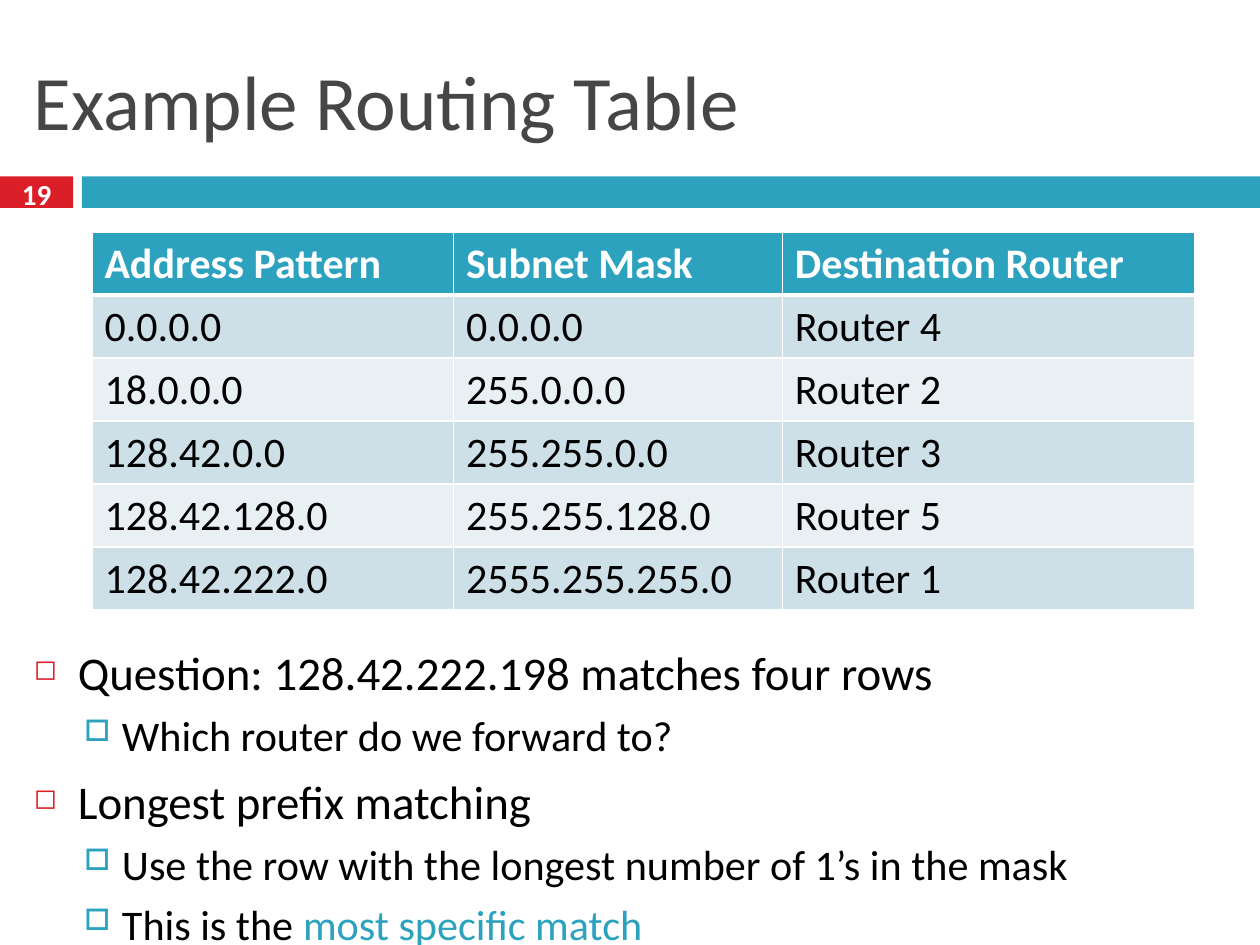
from pptx import Presentation
from pptx.dml.color import RGBColor
from pptx.enum.shapes import MSO_SHAPE as Shape
from pptx.enum.text import MSO_ANCHOR as Anchor, PP_ALIGN as Align
from pptx.oxml.ns import qn
from pptx.util import Inches, Pt
from lxml.etree import SubElement

THEME = {
    "font": "Calibri", "teal": "2DA2BF", "red": "DA1F28", "white": "FFFFFF",
    "black": "000000", "title": "464646", "bands": ("CDE0E8", "E8F0F4"),
    "title_size": 44, "number_size": 16.6, "table_size": 24,
}
LEVELS = (
    {"size": 26.8, "before": 7, "margin": 0.35, "indent": -0.35,
     "bullet": "◻", "bullet_color": THEME["red"], "bullet_pct": 60},
    {"size": 24.1, "before": 5.5, "margin": 0.7, "indent": -0.3,
     "bullet": "□", "bullet_color": THEME["teal"], "bullet_pct": 70},
)
TITLE = "Example Routing Table"
PAGE_NUMBER = "19"
ROUTES = (
    ("Address Pattern", "Subnet Mask", "Destination Router"),
    ("0.0.0.0", "0.0.0.0", "Router 4"),
    ("18.0.0.0", "255.0.0.0", "Router 2"),
    ("128.42.0.0", "255.255.0.0", "Router 3"),
    ("128.42.128.0", "255.255.128.0", "Router 5"),
    ("128.42.222.0", "2555.255.255.0", "Router 1"),
)
COLUMN_WIDTHS = (2.87, 2.61, 3.27)
ROW_HEIGHT = 0.5
POINTS = (
    (0, "Question: 128.42.222.198 matches four rows", ""),
    (1, "Which router do we forward to?", ""),
    (0, "Longest prefix matching", ""),
    (1, "Use the row with the longest number of 1’s in the mask", ""),
    (1, "This is the ", "most specific match"),
)


def rgb(color):
    return RGBColor.from_string(color)


def style(paragraph, size, color, bold=False):
    font = paragraph.font
    font.name, font.size, font.bold = THEME["font"], Pt(size), bold
    font.color.rgb = rgb(color)


def add_bar(slide, left, width, color):
    bar = slide.shapes.add_shape(
        Shape.RECTANGLE, Inches(left), Inches(1.4), Inches(width), Inches(0.25))
    bar.shadow.inherit = False
    bar.fill.solid()
    bar.fill.fore_color.rgb = rgb(color)
    bar.line.fill.background()


def add_text(slide, box, anchor):
    frame = slide.shapes.add_textbox(*map(Inches, box)).text_frame
    frame.word_wrap = True
    frame.vertical_anchor = anchor
    return frame


def set_borders(cell, bottom):
    properties = cell._tc.get_or_add_tcPr()
    sides = (("a:lnL", 1), ("a:lnR", 1), ("a:lnT", 1), ("a:lnB", bottom))
    for position, (side, width) in enumerate(sides):
        line = SubElement(properties, qn(side), w=str(Pt(width)))
        fill = SubElement(line, qn("a:solidFill"))
        SubElement(fill, qn("a:srgbClr"), val=THEME["white"])
        properties.insert(position, line)


def add_routes(slide):
    table = slide.shapes.add_table(
        len(ROUTES), len(COLUMN_WIDTHS), Inches(0.73), Inches(1.84),
        Inches(sum(COLUMN_WIDTHS)), Inches(ROW_HEIGHT * len(ROUTES))).table
    for column, width in zip(table.columns, COLUMN_WIDTHS):
        column.width = Inches(width)
    for r, route in enumerate(ROUTES):
        header = r == 0
        for c, value in enumerate(route):
            cell = table.cell(r, c)
            cell.text = value
            cell.fill.solid()
            cell.fill.fore_color.rgb = rgb(
                THEME["teal"] if header else THEME["bands"][(r - 1) % 2])
            style(cell.text_frame.paragraphs[0], THEME["table_size"],
                  THEME["white" if header else "black"], header)
            set_borders(cell, 3 if header else 1)


def set_bullet(paragraph, level):
    properties = paragraph._p.get_or_add_pPr()
    properties.set("marL", str(Inches(level["margin"])))
    properties.set("indent", str(Inches(level["indent"])))
    color = SubElement(properties, qn("a:buClr"))
    SubElement(color, qn("a:srgbClr"), val=level["bullet_color"])
    SubElement(properties, qn("a:buSzPct"), val=str(level["bullet_pct"] * 1000))
    SubElement(properties, qn("a:buChar"), char=level["bullet"])


def add_points(slide):
    frame = add_text(slide, (0.17, 5.06, 9.83, 2.44), Anchor.TOP)
    for i, (depth, text, highlight) in enumerate(POINTS):
        level = LEVELS[depth]
        paragraph = frame.add_paragraph() if i else frame.paragraphs[0]
        paragraph.level = depth
        paragraph.space_before = Pt(level["before"])
        set_bullet(paragraph, level)
        style(paragraph, level["size"], THEME["black"])
        paragraph.add_run().text = text
        if highlight:
            run = paragraph.add_run()
            run.text = highlight
            run.font.color.rgb = rgb(THEME["teal"])


def main():
    deck = Presentation()
    deck.slide_width, deck.slide_height = Inches(10), Inches(7.5)
    slide = deck.slides.add_slide(deck.slide_layouts[6])
    add_bar(slide, 0, 0.58, THEME["red"])
    add_bar(slide, 0.65, 9.35, THEME["teal"])

    title = add_text(slide, (0.17, 0.25, 9.67, 1.08), Anchor.MIDDLE)
    title.text = TITLE
    style(title.paragraphs[0], THEME["title_size"], THEME["title"])

    number = add_text(slide, (0, 1.37, 0.58, 0.33), Anchor.MIDDLE)
    number.text = PAGE_NUMBER
    number.paragraphs[0].alignment = Align.CENTER
    style(number.paragraphs[0], THEME["number_size"], THEME["white"], True)

    add_routes(slide)
    add_points(slide)
    deck.save("out.pptx")


if __name__ == "__main__":
    main()
